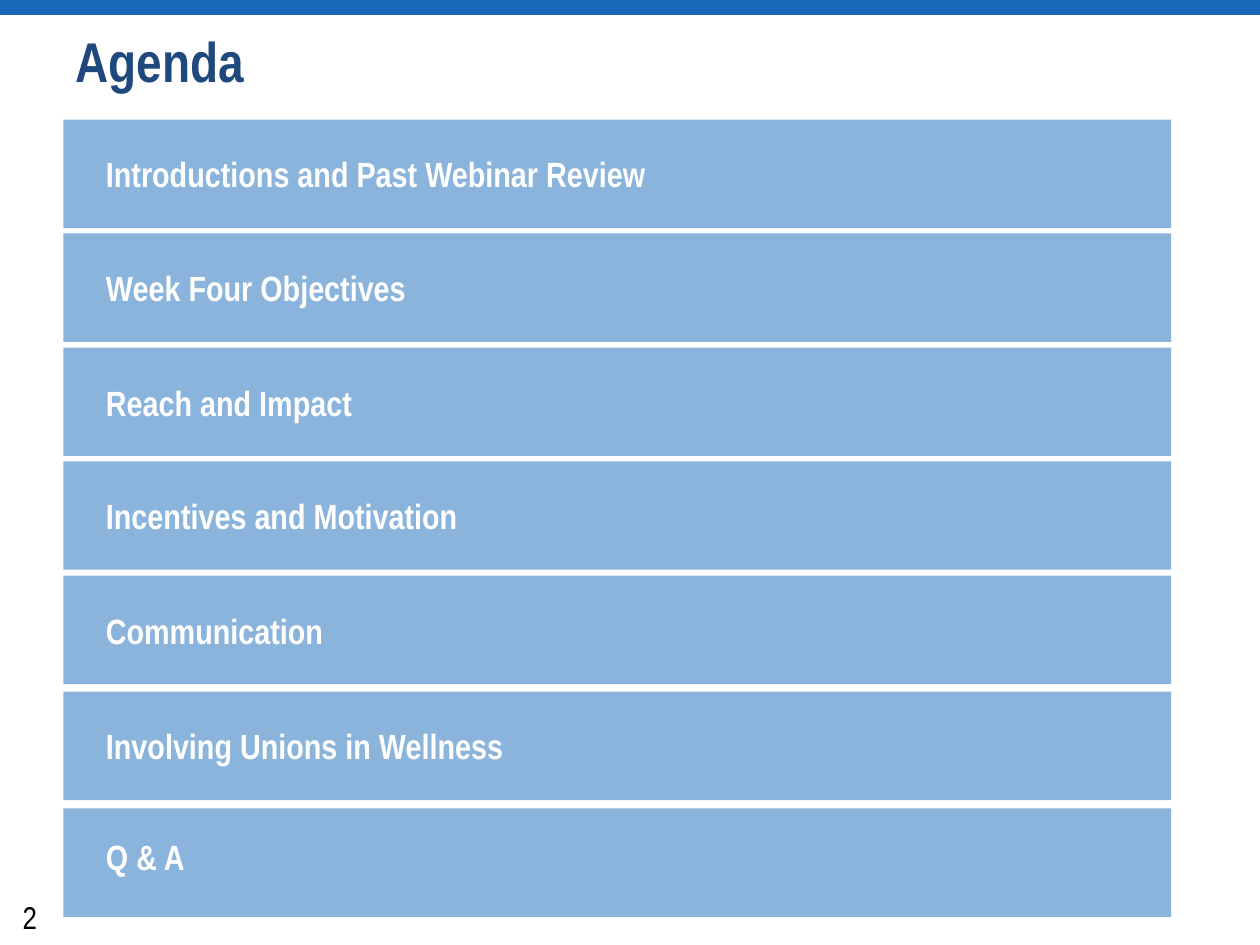
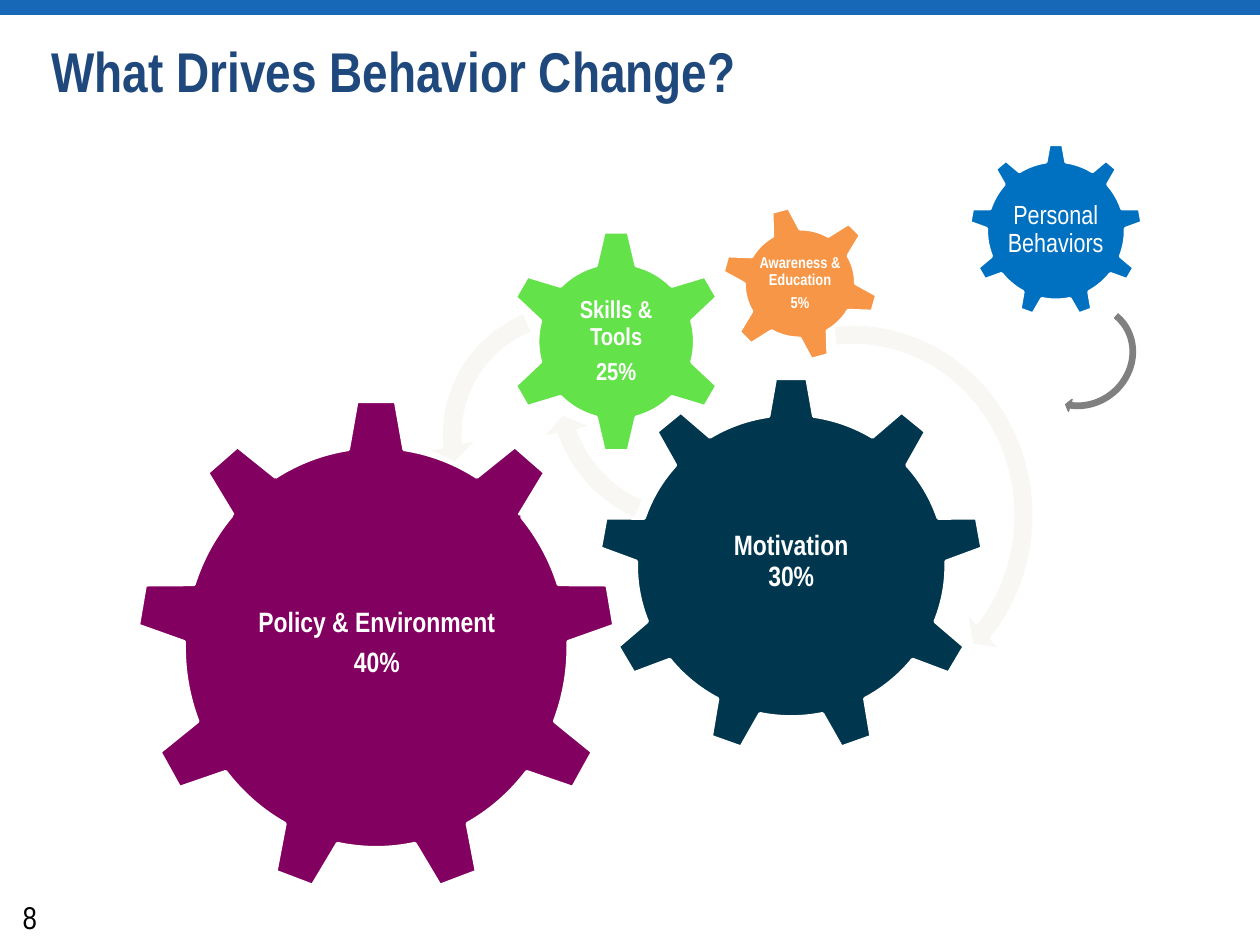
from pptx import Presentation, util as u
from pptx.dml import color
from pptx.enum import shapes, text

FONT = "Arial Narrow"
COLORS = {
    "band": "1769B8", "title": "1F497D", "row": "8BB4DC",
    "white": "FFFFFF", "black": "000000",
    "policy": "820060", "motivation": "00364E", "skills": "63E24A",
    "awareness": "F79646", "personal": "0070C0",
    "pale": "F8F7F3", "gray": "808080",
}
PRESET = shapes.MSO_SHAPE

# Agenda rows: label, top of the row, drop of the label inside it
AGENDA = [
    ("Introductions and Past Webinar Review", 68.4, 15.2),
    ("Week Four Objectives", 133.4, 15.6),
    ("Reach and Impact", 198.6, 15.8),
    ("Incentives and Motivation", 263.6, 15.2),
    ("Communication", 329, 15.8),
    ("Involving Unions in Wellness", 395.2, 15.2),
    ("Q & A", 462, 11.8),
]


def rgb(name):
    return color.RGBColor.from_string(COLORS[name])


def points(box):
    return [u.Pt(value) for value in box]


def add_block(page, preset, box, fill, line=None, width=0, turn=0):
    """Filled preset shape, outlined only when a line colour is given."""
    block = page.shapes.add_shape(preset, *points(box))
    block.shadow.inherit = False
    block.fill.solid()
    block.fill.fore_color.rgb = rgb(fill)
    if line:
        block.line.color.rgb = rgb(line)
        block.line.width = u.Pt(width)
    else:
        block.line.fill.background()
    block.rotation = turn
    return block


def add_span(para, words, size, ink, bold=True):
    span = para.add_run()
    span.text = words
    span.font.name = FONT
    span.font.size = u.Pt(size)
    span.font.bold = bold
    span.font.color.rgb = rgb(ink)


def add_text(page, box, words, size, ink="white", bold=True):
    """Left-aligned single-paragraph text box."""
    label = page.shapes.add_textbox(*points(box))
    label.text_frame.word_wrap = True
    add_span(label.text_frame.paragraphs[0], words, size, ink, bold)


def add_page(deck, heading, box, number):
    """Slide with the shared title style and page number."""
    page = deck.slides.add_slide(deck.slide_layouts[5])
    title = page.shapes.title
    title.left, title.top, title.width, title.height = points(box)
    frame = title.text_frame
    frame.word_wrap = True
    frame.auto_size = text.MSO_AUTO_SIZE.SHAPE_TO_FIT_TEXT
    frame.vertical_anchor = text.MSO_ANCHOR.BOTTOM
    para = frame.paragraphs[0]
    para.alignment = text.PP_ALIGN.LEFT
    para.line_spacing = 0.9
    add_span(para, heading, 32, "title")
    add_text(page, (5.8, 509.8, 36.7, 18), number, 18, "black", False)
    return page


def add_master_band(deck, page):
    """Top band, moved to the back of the master so every slide shows it."""
    band = add_block(page, PRESET.RECTANGLE, (0, 0, 720, 8.6), "band")
    deck.slide_master.shapes.element.insert(2, band.element)


def add_agenda_row(page, box, words, drop):
    left, top, width, height = box
    add_block(page, PRESET.RECTANGLE, box, "row")
    add_text(page, (left + 17.3, top + drop, 552.2, 31), words, 20)


def add_gear(page, preset, box, fill, label, lines, size,
             bold=True, turn=0, inset=1.5, backed=False):
    """Gear with an upright label; the label box is relative to the gear."""
    add_block(page, preset, box, fill, "white", 2, turn)
    dx, dy, width, height = label
    plate = page.shapes.add_textbox(
        *points((box[0] + dx, box[1] + dy, width, height)))
    if backed:
        plate.fill.solid()
        plate.fill.fore_color.rgb = rgb(fill)
    frame = plate.text_frame
    frame.word_wrap = True
    frame.vertical_anchor = text.MSO_ANCHOR.MIDDLE
    frame.margin_left = frame.margin_right = u.Pt(inset)
    frame.margin_top = frame.margin_bottom = u.Pt(inset)
    for index, words in enumerate(lines):
        para = frame.add_paragraph() if index else frame.paragraphs[0]
        para.alignment = text.PP_ALIGN.CENTER
        para.line_spacing = 0.9
        para.space_after = u.Pt(round(size * 0.35, 1))
        for part, piece in enumerate(words.split("\n")):
            if part:
                para.add_line_break()
            add_span(para, piece, size, "white", bold)


def add_arc_arrow(page, preset, box, bends, fill="pale", line=None, turn=0):
    arrow = add_block(page, preset, box, fill, line, 0.75, turn)
    for index, bend in enumerate(bends):
        arrow.adjustments[index] = bend


def build_agenda(page, left, width, height):
    for words, top, drop in AGENDA:
        add_agenda_row(page, (left, top, width, height), words, drop)


def build_drivers(page):
    # Upper gears
    add_gear(page, PRESET.GEAR_9, (342, 215.3, 220.3, 216), "motivation",
             (43.9, 50.4, 132.5, 110.9), ["Motivation\n30%"], 16)
    add_gear(page, PRESET.GEAR_6, (288, 131, 128.2, 128.2), "skills",
             (32.4, 32.4, 63.4, 63.4), ["Skills & Tools", "25%"], 14)
    add_gear(page, PRESET.GEAR_6, (411.8, 117.4, 90.7, 89.3), "awareness",
             (20.2, 19.4, 50.4, 50.4), ["Awareness & Education", "5%"], 9,
             turn=345, inset=0.75)
    # Pale arrows between the gears
    add_arc_arrow(page, PRESET.CIRCULAR_ARROW, (378, 179.3, 218.9, 230.4),
                  (0.047, 2.99, 25.13, 158.68, 0.055))
    add_arc_arrow(page, PRESET.LEFT_CIRCULAR_ARROW, (246.2, 167, 163.4, 163.4),
                  (0.065, 4.3, 104.89, 148.38, 0.075))
    add_arc_arrow(page, PRESET.CIRCULAR_ARROW, (307.4, 133.2, 176.4, 176.4),
                  (0.06, 3.94, 133.14, 105.08, 0.07), turn=299.1)
    # Largest gear
    add_gear(page, PRESET.GEAR_9, (77.8, 228.2, 274.3, 283.7), "policy",
             (55.4, 66.3, 164.2, 146.2), ["Policy & Environment", "40%"], 16,
             backed=True)
    # Personal behaviors with its own arrow
    add_gear(page, PRESET.GEAR_9, (553.7, 82.1, 99.4, 99.4), "personal",
             (20.1, 23.7, 59, 51.1), ["Personal Behaviors"], 15, bold=False)
    add_arc_arrow(page, PRESET.CIRCULAR_ARROW, (586.1, 169.2, 63.4, 67.7),
                  (0.049, 3.13, 29.44, 155.16, 0.057), "gray", "gray", 53.2)


def main():
    deck = Presentation()
    deck.slide_width, deck.slide_height = u.Pt(720), u.Pt(540)
    agenda = add_page(deck, "Agenda", (36, 15.1, 648, 42.5), "2")
    add_master_band(deck, agenda)
    build_agenda(agenda, 36.2, 633, 62)
    drivers = add_page(deck, "What Drives Behavior Change?",
                       (22.3, 20.9, 631.4, 42.5), "8")
    build_drivers(drivers)
    deck.save("out.pptx")


if __name__ == "__main__":
    main()
